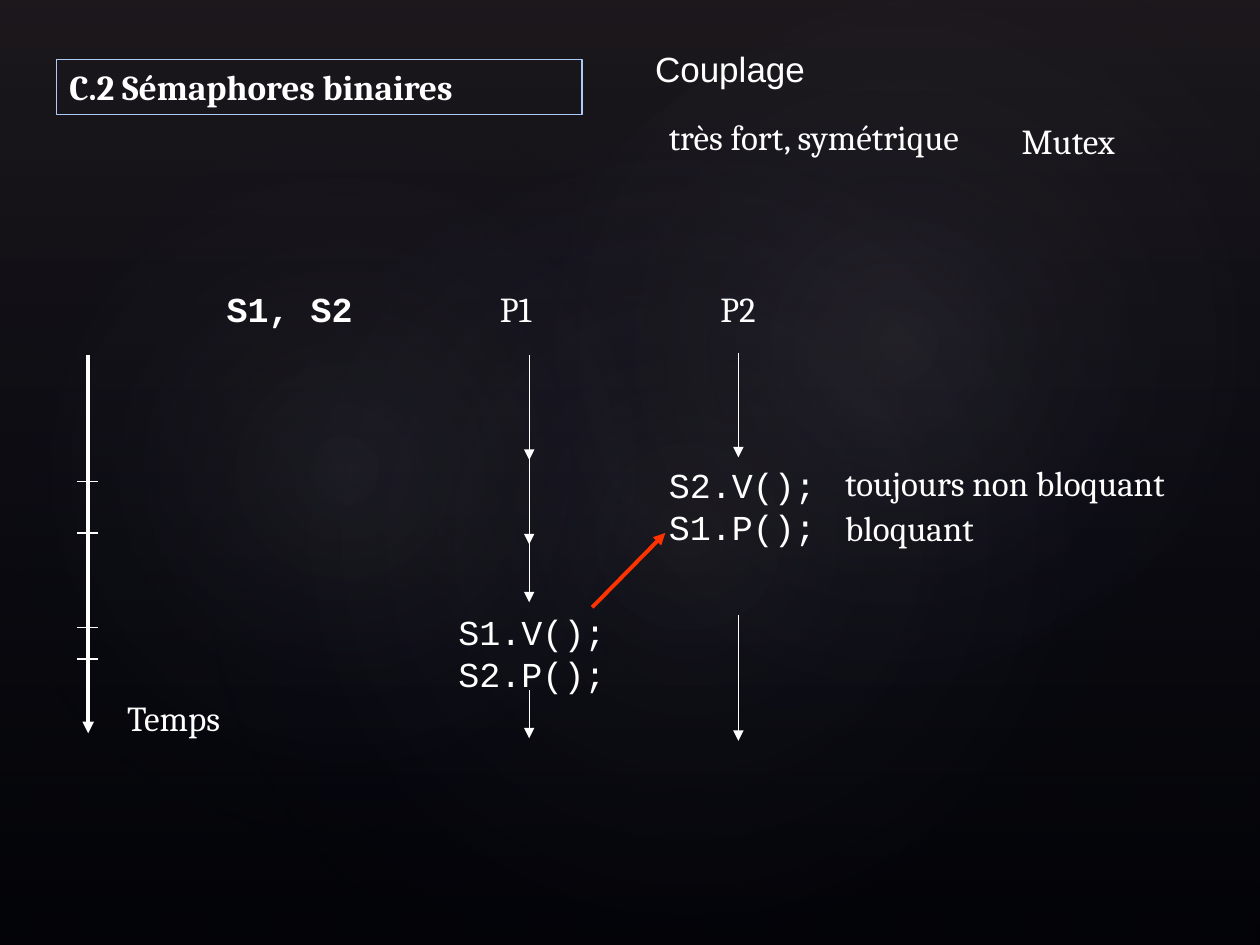
from dataclasses import dataclass

from lxml.etree import SubElement
from pptx import Presentation
from pptx.dml.color import RGBColor
from pptx.enum.shapes import MSO_CONNECTOR, MSO_SHAPE
from pptx.enum.text import MSO_ANCHOR, MSO_AUTO_SIZE, PP_ALIGN
from pptx.oxml import parse_xml
from pptx.oxml.ns import nsdecls, qn
from pptx.util import Inches, Pt


@dataclass(frozen=True)
class Theme:
    """Colours, fonts and sizes of the slide."""
    back: str = "000000"
    ink: str = "FFFFFF"
    alert: str = "FF3300"
    frame: str = "ACCBF9"
    top: str = "504652"
    base: str = "242852"
    glow: str = "C4BCC6"
    serif: str = "Cambria"
    sans: str = "Arial"
    code: str = "Courier New"
    size: float = 20
    thin: float = 0.75
    thick: float = 2.25


THEME = Theme()


def color(code):
    """Turn a hex code into a colour."""
    return RGBColor.from_string(code)


def shade(slide, kind, box, stops, way, turn=0):
    """Add a shape with a translucent gradient of (place, colour, alpha) stops."""
    shape = slide.shapes.add_shape(kind, *map(Inches, box))
    shape.rotation = turn
    shape.shadow.inherit = False
    shape.line.fill.background()
    shape.fill.background()
    marks = "".join(
        f'<a:gs pos="{place * 1000}"><a:srgbClr val="{code}">'
        f'<a:alpha val="{alpha * 1000}"/></a:srgbClr></a:gs>'
        for place, code, alpha in stops)
    grad = parse_xml(f'<a:gradFill {nsdecls("a")} rotWithShape="1">'
                     f'<a:gsLst>{marks}</a:gsLst>{way}</a:gradFill>')
    props = shape._element.spPr
    props.replace(props.find(qn("a:noFill")), grad)


def backdrop(slide):
    """Paint the dark ground and its three glows."""
    fill = slide.background.fill
    fill.solid()
    fill.fore_color.rgb = color(THEME.back)
    shade(slide, MSO_SHAPE.RECTANGLE, (0, 0, 10, 7.5),
          [(0, THEME.top, 36), (100, THEME.base, 10)],
          '<a:lin ang="5400000" scaled="0"/>')
    ring = ('<a:path path="circle"><a:fillToRect l="50000" t="50000" '
            'r="50000" b="50000"/></a:path>')
    for box, turn, alpha in [((1.5, 1.14, 7.92, 6.24), 328.7, 7),
                             ((-0.3, 1.28, 6.06, 4.9), 294.3, 8),
                             ((3.58, 0.13, 7.09, 5.2), 328.7, 8)]:
        shade(slide, MSO_SHAPE.OVAL, box,
              [(0, THEME.glow, alpha), (58, THEME.base, 0)], ring, turn)


def write(frame, text, face, bold=False):
    """Put styled lines of text into a frame."""
    frame.text = text
    frame.vertical_anchor = MSO_ANCHOR.TOP
    for para in frame.paragraphs:
        para.alignment = PP_ALIGN.LEFT
        font = para.font
        font.name, font.size, font.bold = face, Pt(THEME.size), bold
        font.color.rgb = color(THEME.ink)


def label(slide, text, box, face=THEME.serif, bold=False):
    """Add an unwrapped text box."""
    frame = slide.shapes.add_textbox(*map(Inches, box)).text_frame
    frame.word_wrap = False
    write(frame, text, face, bold)


def heading(slide, text, box):
    """Place the framed title above the backdrop."""
    title = slide.shapes.title
    title.left, title.top, title.width, title.height = map(Inches, box)
    title.line.color.rgb = color(THEME.frame)
    title.line.width = Pt(THEME.thin)
    frame = title.text_frame
    frame.word_wrap = True
    frame.auto_size = MSO_AUTO_SIZE.NONE
    write(frame, text, THEME.serif, True)
    slide.shapes._spTree.append(title._element)


def line(slide, start, end, width=THEME.thin, code=THEME.ink, head=True):
    """Add a straight line, with an arrowhead if asked."""
    link = slide.shapes.add_connector(
        MSO_CONNECTOR.STRAIGHT, *map(Inches, (*start, *end)))
    link.line.color.rgb = color(code)
    link.line.width = Pt(width)
    if head:
        SubElement(link.line._get_or_add_ln(), qn("a:tailEnd"), type="triangle")
    SubElement(link._element.spPr, qn("a:effectLst"))


def clock(slide):
    """Draw the time axis with its ticks."""
    line(slide, (0.7, 2.82), (0.7, 5.82), THEME.thick)
    for y in (3.82, 4.23, 4.98, 5.23):
        line(slide, (0.61, y), (0.78, y), head=False)
    label(slide, "Temps", (0.91, 5.48, 1.02, 0.44))


def flow(slide, name, x, left, spans, calls, box):
    """Draw one process: its name, its arrows and its calls."""
    label(slide, name, (left, 2.23, 0.53, 0.44))
    for top, end in spans:
        line(slide, (x, top), (x, end))
    label(slide, calls, box, THEME.code)


def main():
    """Build and save the slide."""
    deck = Presentation()
    deck.slide_width, deck.slide_height = Inches(10), Inches(7.5)
    slide = deck.slides.add_slide(deck.slide_layouts[5])
    backdrop(slide)
    heading(slide, "C.2 Sémaphores binaires", (0.45, 0.47, 4.17, 0.44))
    label(slide, "Couplage", (5.1, 0.33, 1.39, 0.43), THEME.sans)
    label(slide, "très fort, symétrique", (5.21, 0.87, 2.72, 0.44))
    label(slide, "Mutex", (8.01, 0.9, 1.01, 0.44))
    clock(slide)
    label(slide, "S1, S2", (1.7, 2.23, 1.2, 0.43), THEME.code, True)
    flow(slide, "P1", 4.2, 3.87,
         [(2.82, 3.65), (3.57, 4.32), (4.23, 4.78), (5.48, 5.86)],
         "S1.V();\nS2.P();", (3.54, 4.8, 1.37, 0.77))
    flow(slide, "P2", 5.86, 5.62, [(2.8, 3.63), (4.88, 5.88)],
         "S2.V();\nS1.P();", (5.21, 3.63, 1.37, 0.77))
    label(slide, "toujours non bloquant", (6.61, 3.61, 2.96, 0.44))
    label(slide, "bloquant", (6.61, 3.97, 1.32, 0.44))
    line(slide, (4.7, 4.82), (5.28, 4.23), THEME.thick, THEME.alert)
    deck.save("out.pptx")


if __name__ == "__main__":
    main()
